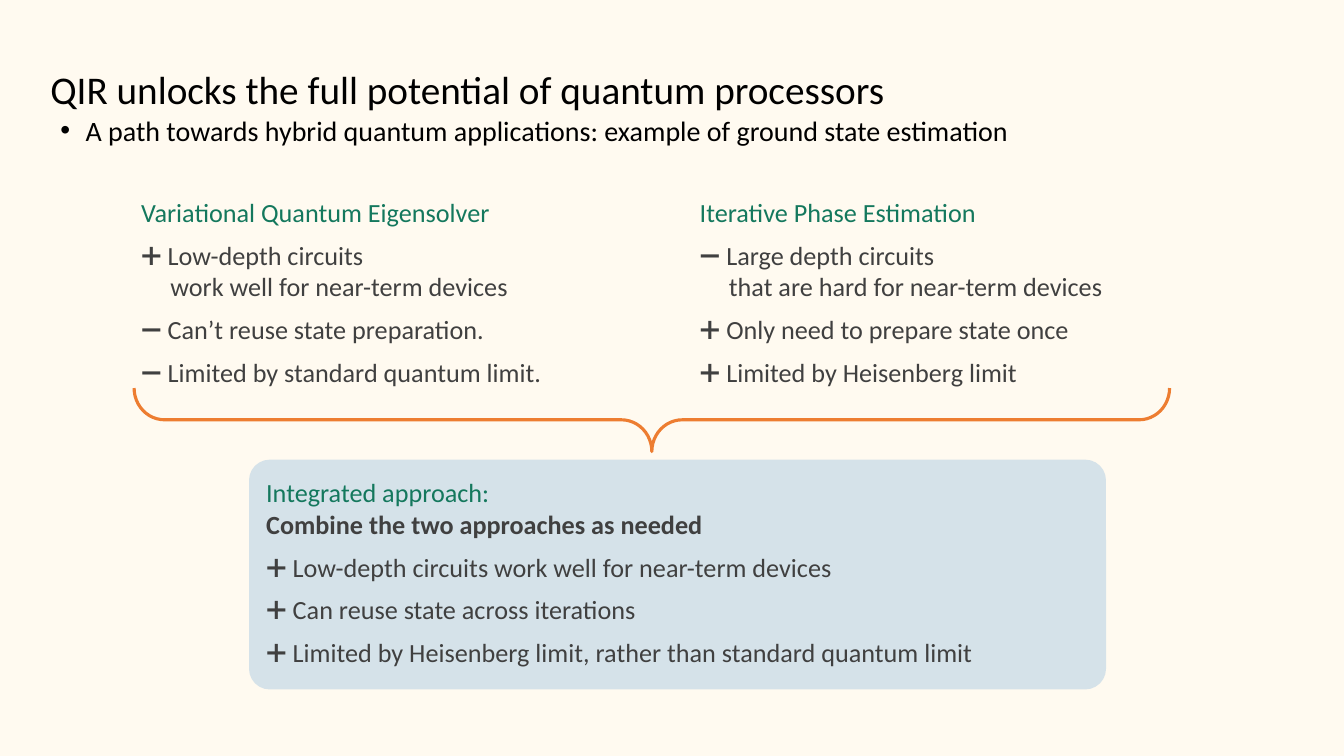
from lxml import etree
from pptx import Presentation
from pptx.dml.color import RGBColor
from pptx.enum.shapes import MSO_SHAPE
from pptx.enum.text import MSO_ANCHOR
from pptx.oxml.ns import qn
from pptx.util import Pt

ROUNDED = MSO_SHAPE.ROUNDED_RECTANGLE
BRACE = MSO_SHAPE.RIGHT_BRACE
MIDDLE = MSO_ANCHOR.MIDDLE
TOP = MSO_ANCHOR.TOP

PX = 9144
FONT = "Calibri"
COLORS = {
    "background": "FFFAF0",
    "title": "000000",
    "heading": "14785D",
    "point": "404040",
    "panel": "5B9BD5",
    "brace": "ED7D31",
}

TITLE = "QIR unlocks the full potential of quantum processors"
SUBTITLE = "A path towards hybrid quantum applications: example of ground state estimation"
APPROACHES = [
    {
        "box": (133, 192, 514, 163),
        "heading": "Variational Quantum Eigensolver",
        "summary": None,
        "points": [
            "➕ Low-depth circuits\vwork well for near-term devices",
            "➖ Can’t reuse state preparation.",
            "➖ Limited by standard quantum limit.",
        ],
    },
    {
        "box": (687, 192, 473, 170),
        "heading": "Iterative Phase Estimation",
        "summary": None,
        "points": [
            "➖ Large depth circuits\vthat are hard for near-term devices",
            "➕ Only need to prepare state once",
            "➕ Limited by Heisenberg limit",
        ],
    },
    {
        "box": (257, 470, 840, 241),
        "heading": "Integrated approach:",
        "summary": "Combine the two approaches as needed",
        "points": [
            "➕ Low-depth circuits work well for near-term devices",
            "➕ Can reuse state across iterations",
            "➕ Limited by Heisenberg limit, rather than standard quantum limit",
        ],
    },
]
PANEL_BOX = (247, 456, 850, 228)
BRACE_CENTER = (646, 416)
BRACE_SPAN, BRACE_DEPTH = 1027, 63
POINT_INDENT = 29
BULLET_INDENT = 25


def color(name):
    return RGBColor.from_string(COLORS[name])


def emu(box):
    return [side * PX for side in box]


def style(run, size, color_name, bold=False):
    run.font.name = FONT
    run.font.size = Pt(size)
    run.font.bold = bold
    run.font.color.rgb = color(color_name)


def hang(paragraph, indent):
    properties = paragraph._p.get_or_add_pPr()
    properties.set("marL", str(indent * PX))
    properties.set("indent", str(-indent * PX))
    return properties


def add_text(slide, box, margins, anchor=TOP):
    frame = slide.shapes.add_textbox(*emu(box)).text_frame
    frame.word_wrap = True
    frame.vertical_anchor = anchor
    frame.margin_left = frame.margin_right = margins[0] * PX
    frame.margin_top = frame.margin_bottom = margins[1] * PX
    return frame


def add_titles(slide):
    title = add_text(slide, (50, 68, 1236, 44), (0, 0), MIDDLE).paragraphs[0]
    title.text = TITLE
    title.line_spacing = Pt(31.4)
    style(title.runs[0], 28, "title")

    subtitle = add_text(slide, (50, 111, 1168, 54), (10, 5)).paragraphs[0]
    subtitle.text = SUBTITLE
    subtitle.line_spacing = 0.9
    properties = hang(subtitle, BULLET_INDENT)
    etree.SubElement(properties, qn("a:buFont")).set("typeface", "Arial")
    etree.SubElement(properties, qn("a:buChar")).set("char", "•")
    style(subtitle.runs[0], 20, "title")


def add_panel(slide):
    panel = slide.shapes.add_shape(ROUNDED, *emu(PANEL_BOX))
    panel.adjustments[0] = 0.09
    panel.shadow.inherit = False
    panel.fill.solid()
    panel.fill.fore_color.rgb = color("panel")
    panel.line.fill.background()
    tint = panel._element.spPr.find(qn("a:solidFill"))[0]
    etree.SubElement(tint, qn("a:alpha")).set("val", "25000")


def add_approach(slide, approach):
    frame = add_text(slide, approach["box"], (7, 3))
    heading = frame.paragraphs[0]
    heading.text = approach["heading"]
    heading.space_after = Pt(6)
    style(heading.runs[0], 18.7, "heading")
    if approach["summary"]:
        heading.add_line_break()
        summary = heading.add_run()
        summary.text = approach["summary"]
        style(summary, 18.7, "point", bold=True)
    for text in approach["points"]:
        point = frame.add_paragraph()
        point.text = text
        point.space_before = Pt(2)
        point.space_after = Pt(6)
        hang(point, POINT_INDENT)
        for run in point.runs:
            style(run, 18.7, "point")


def add_brace(slide):
    x, y = BRACE_CENTER
    left, top = x - BRACE_DEPTH // 2, y - BRACE_SPAN // 2
    brace = slide.shapes.add_shape(BRACE, *emu((left, top, BRACE_DEPTH, BRACE_SPAN)))
    brace.rotation = 90
    brace.adjustments[0] = 0.48
    brace.adjustments[1] = 0.5
    brace.shadow.inherit = False
    brace.fill.background()
    brace.line.color.rgb = color("brace")
    brace.line.width = Pt(2.25)


def main():
    deck = Presentation()
    deck.slide_width, deck.slide_height = emu((1333, 750))
    slide = deck.slides.add_slide(deck.slide_layouts[6])
    slide.background.fill.solid()
    slide.background.fill.fore_color.rgb = color("background")
    add_titles(slide)
    add_panel(slide)
    for approach in APPROACHES:
        add_approach(slide, approach)
    add_brace(slide)
    deck.save("out.pptx")


if __name__ == "__main__":
    main()
